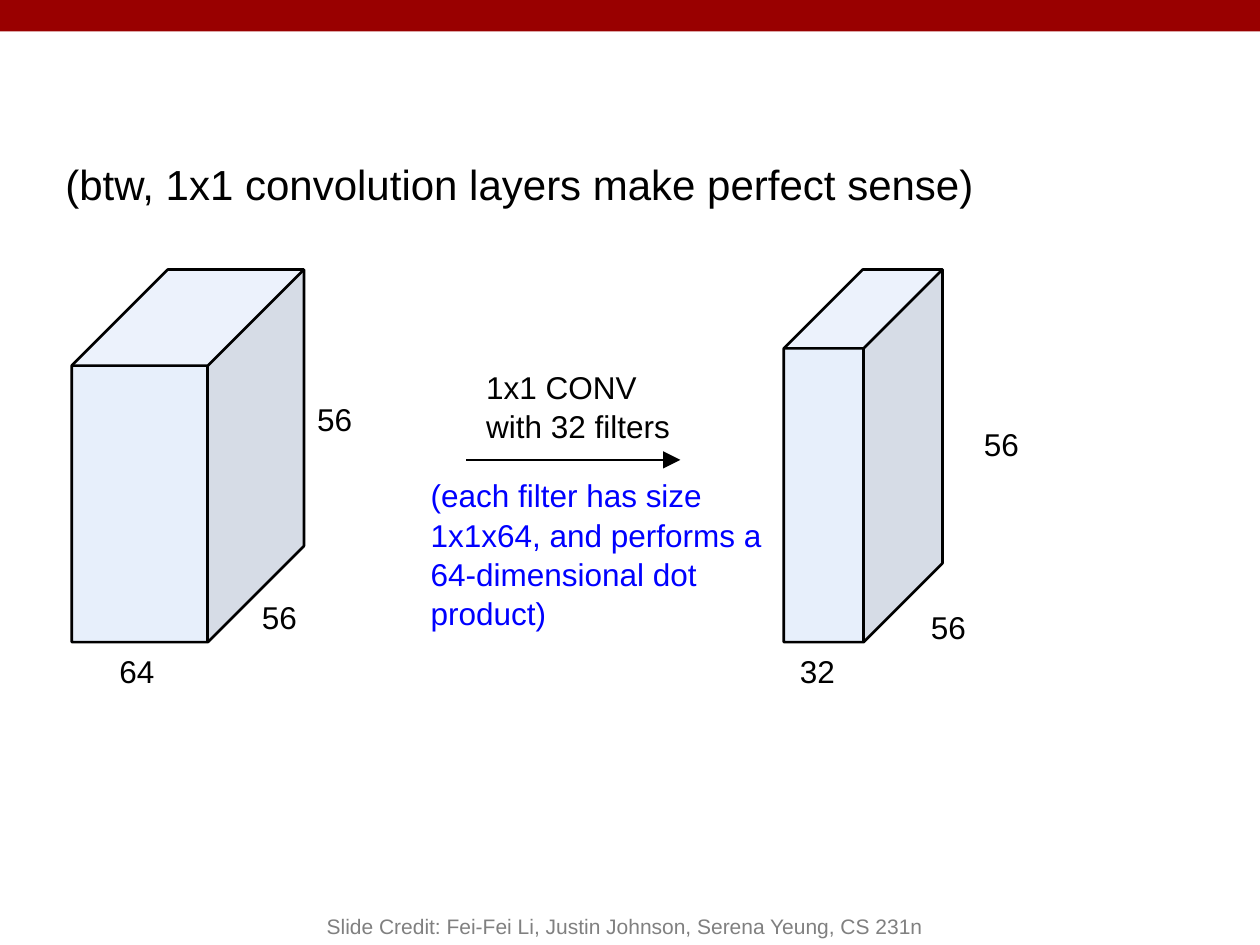
from pptx import Presentation
from pptx.dml.color import RGBColor
from pptx.enum.shapes import MSO_CONNECTOR, MSO_SHAPE
from pptx.enum.text import MSO_ANCHOR, PP_ALIGN
from pptx.oxml.ns import qn
from pptx.util import Pt
from lxml.etree import SubElement

RED = RGBColor(0x99, 0x00, 0x00)
BLACK = RGBColor(0, 0, 0)
BLUE = RGBColor(0, 0, 0xFF)
GRAY = RGBColor(0x80, 0x80, 0x80)
PALE = RGBColor(0xC9, 0xDA, 0xF8)


def put(obj, vals):
    for key, val in vals.items():
        setattr(obj, key, val)


def label(text, box, size=18, color=BLACK, pad=7.2, space=1.04,
          align=PP_ALIGN.LEFT, anchor=MSO_ANCHOR.TOP):
    frame = slide.shapes.add_textbox(*map(Pt, box)).text_frame
    put(frame, {
        "text": text,
        "word_wrap": True,
        "vertical_anchor": anchor,
        "margin_left": Pt(7.2),
        "margin_right": Pt(7.2),
        "margin_top": Pt(pad),
        "margin_bottom": Pt(pad),
    })
    for para in frame.paragraphs:
        put(para, {"alignment": align, "line_spacing": space})
        put(para.runs[0].font, {"name": "Arial", "size": Pt(size)})
        para.runs[0].font.color.rgb = color


deck = Presentation()
put(deck, {"slide_width": Pt(720), "slide_height": Pt(540)})
slide = deck.slides.add_slide(deck.slide_layouts[6])

bar = slide.shapes.add_shape(MSO_SHAPE.RECTANGLE, 0, 0, Pt(720), Pt(18))
bar.shadow.inherit = False
bar.fill.solid()
bar.fill.fore_color.rgb = RED
bar.line.fill.background()

label("(btw, 1x1 convolution layers make perfect sense)",
      (30.3, 82.1, 669.6, 74.9), size=24)

for left, width, depth in [(41, 132.7, 0.414), (447.9, 90.7, 0.497)]:
    cube = slide.shapes.add_shape(
        MSO_SHAPE.CUBE, Pt(left), Pt(154), Pt(width), Pt(212.9))
    cube.adjustments[0] = depth
    cube.shadow.inherit = False
    cube.fill.solid()
    cube.fill.fore_color.rgb = PALE
    tint = cube.fill._xPr.find(qn("a:solidFill"))[0]
    SubElement(tint, qn("a:alpha"), val="43000")
    cube.line.color.rgb = BLACK
    cube.line.width = Pt(1.5)

for text, left, top in [
    ("64", 61.2, 364.3), ("56", 142.6, 333.4), ("56", 174.2, 220.3),
    ("32", 450, 364.3), ("56", 524.9, 339.1), ("56", 555.1, 234.7),
]:
    label(text, (left, top, 38.2, 27.4))

arrow = slide.shapes.add_connector(
    MSO_CONNECTOR.STRAIGHT, Pt(266.4), Pt(262.8), Pt(388.8), Pt(262.8))
arrow.line.color.rgb = BLACK
arrow.line.width = Pt(0.75)
SubElement(arrow.line._get_or_add_ln(), qn("a:tailEnd"),
           type="triangle", w="lg", len="lg")
SubElement(arrow._element.spPr, qn("a:effectLst"))

label("1x1 CONV\nwith 32 filters", (270.7, 202.3, 140.4, 33.8))
label("(each filter has size 1x1x64, and performs a "
      "64-dimensional dot product)", (239, 264.2, 224.6, 48.2), color=BLUE)
label("Slide Credit: Fei-Fei Li, Justin Johnson, Serena Yeung, CS 231n",
      (144, 504, 426.2, 36), size=12, color=GRAY, pad=3.6, space=1.0,
      align=PP_ALIGN.CENTER, anchor=MSO_ANCHOR.BOTTOM)

deck.save("out.pptx")
